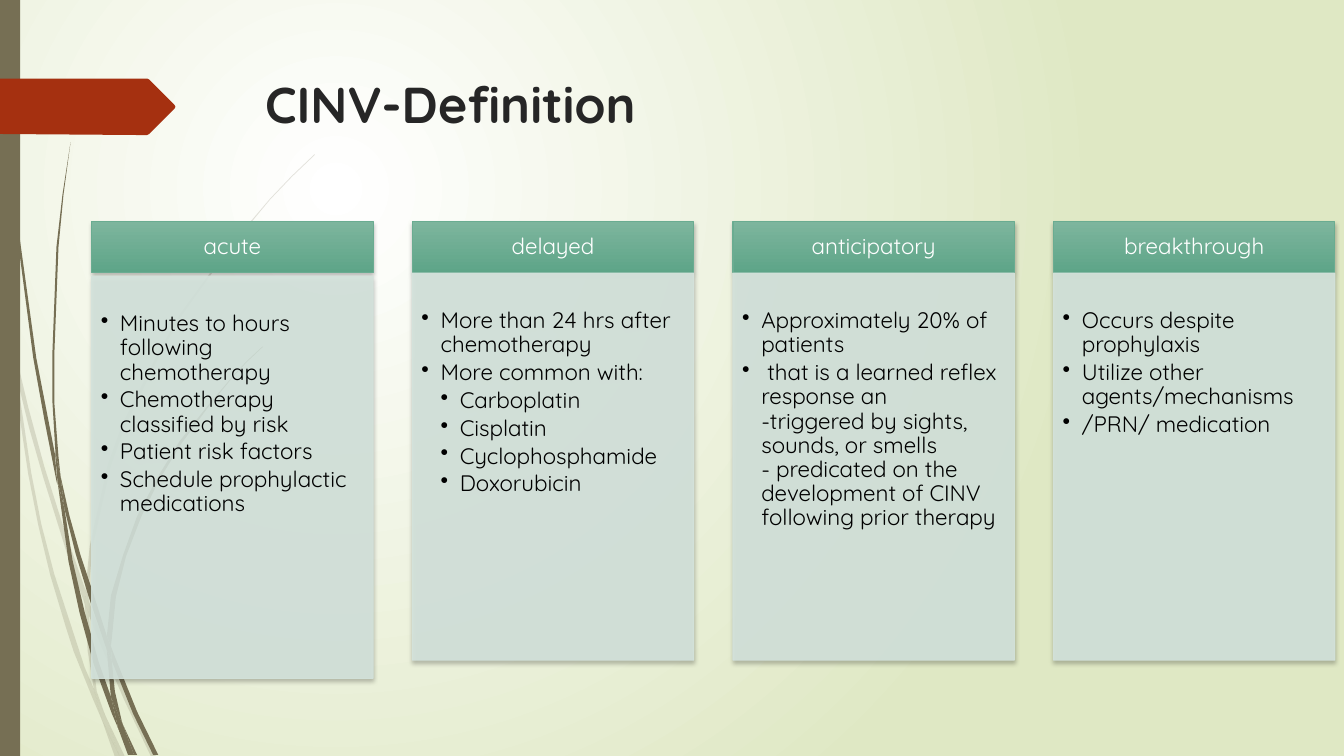
import pptx
import pptx.dml.color
import pptx.enum.shapes
import pptx.enum.text
import pptx.oxml
import pptx.oxml.ns
import pptx.util
from pptx.util import Inches, Pt

NAMESPACE = pptx.oxml.ns.nsdecls("a")
FONT = "Quicksand"


def color(hex_string):
    return pptx.dml.color.RGBColor.from_string(hex_string)


def add_xml(parent, xml):
    """Append a drawing element written without its namespace."""
    head, rest = xml.split(" ", 1)
    parent.append(pptx.oxml.parse_xml(f"{head} {NAMESPACE} {rest}"))


presentation = pptx.Presentation()
presentation.slide_width = Inches(13.33)
presentation.slide_height = Inches(7.5)
slide = presentation.slides.add_slide(presentation.slide_layouts[6])

# Background: radial glow
background = slide.background.fill
background.gradient()
for stop, stop_color in zip(background.gradient_stops, ("FFFFFF", "DFE8C4")):
    stop.color.rgb = color(stop_color)
gradient = slide.background._cSld.find(".//" + pptx.oxml.ns.qn("a:gradFill"))
gradient.remove(gradient.find(pptx.oxml.ns.qn("a:lin")))
add_xml(gradient, '<a:path path="circle"><a:fillToRect l="50000" t="50000" '
                  'r="100000" b="100000"/></a:path>')

# Grass outlines and title tag, in hundredths of an inch
pale_grass = [
    [(11, 350), (9, 322), (0, 282), (0, 299), (10, 344)],
    [(58, 522), (66, 548), (84, 599), (85, 586), (62, 520), (44, 463),
     (28, 404), (14, 345), (17, 376), (29, 425), (43, 474)],
    [(92, 607), (88, 596), (88, 610), (99, 638), (123, 694), (150, 751),
     (155, 751), (127, 692), (114, 664)],
    [(119, 751), (124, 751), (105, 711)],
    [(93, 683), (84, 662), (70, 619), (54, 570), (41, 520), (31, 469),
     (17, 376), (11, 350), (16, 390), (28, 470), (38, 521), (50, 571),
     (65, 621), (73, 646), (92, 693), (101, 714), (99, 707)],
    [(84, 599), (87, 646), (93, 683), (96, 692), (105, 711), (103, 706),
     (96, 686), (91, 646), (88, 610), (88, 608)],
    [(88, 584), (92, 542), (110, 462), (124, 423), (160, 349), (181, 312),
     (229, 245), (268, 198), (290, 175), (312, 154), (312, 153), (289, 175),
     (268, 197), (228, 244), (179, 311), (158, 348), (121, 422), (107, 461),
     (89, 542), (85, 584), (85, 586), (88, 596)],
    [(101, 714), (114, 751), (119, 751)],
    [(88, 608), (88, 596), (85, 586), (84, 599)],
    [(96, 692), (93, 683), (99, 707), (101, 714), (119, 751), (105, 711)],
]
dark_grass = [
    [(7, 110), (11, 171), (17, 233), (33, 355), (44, 416), (56, 477),
     (57, 481), (55, 457), (55, 453), (36, 355), (19, 232), (12, 171),
     (8, 109), (5, 48), (4, 0), (3, 0), (4, 48)],
    [(88, 592), (106, 645), (106, 631), (93, 590), (80, 551), (69, 512),
     (60, 472), (64, 505), (75, 549)],
    [(113, 649), (110, 641), (111, 656), (132, 708), (152, 749), (157, 749),
     (136, 706)],
    [(110, 691), (98, 657), (84, 607), (72, 556), (64, 505), (57, 477),
     (68, 557), (79, 608), (93, 659), (111, 708), (117, 722), (116, 717)],
    [(60, 472), (58, 453), (54, 401), (54, 349), (58, 245), (63, 193),
     (70, 141), (62, 193), (56, 245), (52, 349), (52, 399), (55, 449)],
    [(133, 749), (136, 749), (122, 719)],
    [(57, 477), (64, 505), (60, 472), (55, 449), (55, 453)],
    [(111, 633), (115, 592), (125, 552), (140, 513), (158, 476), (180, 440),
     (205, 406), (231, 374), (245, 359), (261, 344), (260, 344), (245, 358),
     (231, 373), (204, 405), (178, 438), (156, 474), (136, 512), (122, 551),
     (110, 591), (106, 631), (110, 641)],
    [(117, 722), (127, 749), (131, 749)],
    [(106, 645), (110, 691), (116, 706), (122, 719), (121, 716), (114, 686),
     (111, 656), (109, 651)],
    [(106, 645), (109, 651), (111, 656), (110, 641), (106, 631)],
    [(116, 706), (110, 691), (116, 717), (117, 722), (130, 749), (133, 749),
     (122, 719)],
]
title_tag = [(173, 108), (148, 133), (146, 134), (136, 134), (0, 133), (0, 78),
             (146, 78), (148, 79), (173, 104), (174, 106)]

side_bar = slide.shapes.add_shape(pptx.enum.shapes.MSO_SHAPE.RECTANGLE,
                                  0, 0, Inches(0.2), Inches(7.5))
side_bar.shadow.inherit = False
side_bar.fill.solid()
side_bar.fill.fore_color.rgb = color("766F54")
side_bar.line.fill.background()

for outlines, fill_color, opacity in ((pale_grass, "766F54", 20),
                                      (dark_grass, "766F54", 100),
                                      ([title_tag], "A53010", 100)):
    for points in outlines:
        builder = slide.shapes.build_freeform(*points[0], scale=Inches(0.01))
        builder.add_line_segments(points[1:], close=True)
        shape = builder.convert_to_shape()
        shape.shadow.inherit = False
        shape.fill.solid()
        shape.fill.fore_color.rgb = color(fill_color)
        shape.line.fill.background()
        if opacity < 100:
            fill_element = shape._element.spPr.find(".//" + pptx.oxml.ns.qn("a:srgbClr"))
            add_xml(fill_element, f'<a:alpha val="{opacity * 1000}"/>')

# Title
title = slide.shapes.add_textbox(Inches(2.53), Inches(0.68), Inches(9.75), Inches(1.4))
title.text_frame.word_wrap = True
run = title.text_frame.paragraphs[0].add_run()
run.text = "CINV-Definition"
run.font.name = FONT
run.font.size = Pt(36)
run.font.bold = True
run.font.color.rgb = color("262626")

# Four columns: heading, body top, body height, (level, lines) of each bullet
columns = [
    ("acute", 2.74, 3.99, [
        (1, ["Minutes to hours following chemotherapy"]),
        (1, ["Chemotherapy classified by risk"]),
        (1, ["Patient risk factors"]),
        (1, ["Schedule prophylactic medications"])]),
    ("delayed", 2.71, 3.84, [
        (1, ["More than 24 hrs after chemotherapy"]),
        (1, ["More common with:"]),
        (2, ["Carboplatin"]),
        (2, ["Cisplatin"]),
        (2, ["Cyclophosphamide"]),
        (2, ["Doxorubicin"])]),
    ("anticipatory", 2.71, 3.84, [
        (1, ["Approximately 20% of patients"]),
        (1, [" that is a learned reflex response an",
             "-triggered by sights, sounds, or smells",
             "- predicated on the development of CINV following prior therapy"])]),
    ("breakthrough", 2.71, 3.84, [
        (1, ["Occurs despite prophylaxis"]),
        (1, ["Utilize other agents/mechanisms"]),
        (1, ["/PRN/ medication"])]),
]
for index, (heading, body_top, body_height, bullets) in enumerate(columns):
    left = Inches(0.91 + 3.18 * index)
    header, body = [
        slide.shapes.add_shape(pptx.enum.shapes.MSO_SHAPE.RECTANGLE, left,
                               Inches(top), Inches(2.79), Inches(height))
        for top, height in ((2.2, 0.5), (body_top, body_height))]

    # Header and body fills
    header.fill.gradient()
    header.fill.gradient_angle = 270
    for stop, stop_color in zip(header.fill.gradient_stops, ("7DB59D", "5EA588")):
        stop.color.rgb = color(stop_color)
    header.line.color.rgb = color("6AAC91")
    body.fill.solid()
    body.fill.fore_color.rgb = color("D4E3DC")
    body.line.color.rgb = color("D4E3DC")
    for color_element in body._element.spPr.iter(pptx.oxml.ns.qn("a:srgbClr")):
        add_xml(color_element, '<a:alpha val="90000"/>')

    # Soft shadow, insets and anchors
    for box, insets, anchor in ((header, (0.12, 0.07, 0.12, 0.07), "MIDDLE"),
                                (body, (0.09, 0.36, 0.12, 0.14), "TOP")):
        box.line.width = Pt(0.75)
        box.shadow.inherit = False
        add_xml(box._element.spPr.find(pptx.oxml.ns.qn("a:effectLst")),
                '<a:outerShdw blurRad="38100" dist="25400" dir="5400000" '
                'rotWithShape="0"><a:srgbClr val="000000"><a:alpha val="25000"/>'
                '</a:srgbClr></a:outerShdw>')
        frame = box.text_frame
        frame.word_wrap = True
        frame.vertical_anchor = pptx.enum.text.MSO_ANCHOR[anchor]
        (frame.margin_left, frame.margin_top,
         frame.margin_right, frame.margin_bottom) = map(Inches, insets)

    # Text: level 0 is the heading
    entries = [(header, 0, [heading])] + [(body, level, lines) for level, lines in bullets]
    for box, level, lines in entries:
        paragraph = box.text_frame.paragraphs[-1]
        if paragraph.runs:
            paragraph = box.text_frame.add_paragraph()
        paragraph.line_spacing = 0.9
        paragraph.alignment = pptx.enum.text.PP_ALIGN.CENTER
        if level:
            paragraph.alignment = pptx.enum.text.PP_ALIGN.LEFT
            paragraph.space_after = Pt(2.6)
            properties = paragraph._p.get_or_add_pPr()
            properties.set("marL", str(Inches(0.19 * level)))
            properties.set("indent", str(-Inches(0.19)))
            add_xml(properties, '<a:buChar char="•"/>')
        for number, line in enumerate(lines):
            if number:
                paragraph.add_line_break()
            run = paragraph.add_run()
            run.text = line
            run.font.name = FONT
            run.font.size = Pt(16)
            run.font.color.rgb = color("000000" if level else "FFFFFF")

presentation.save("out.pptx")
